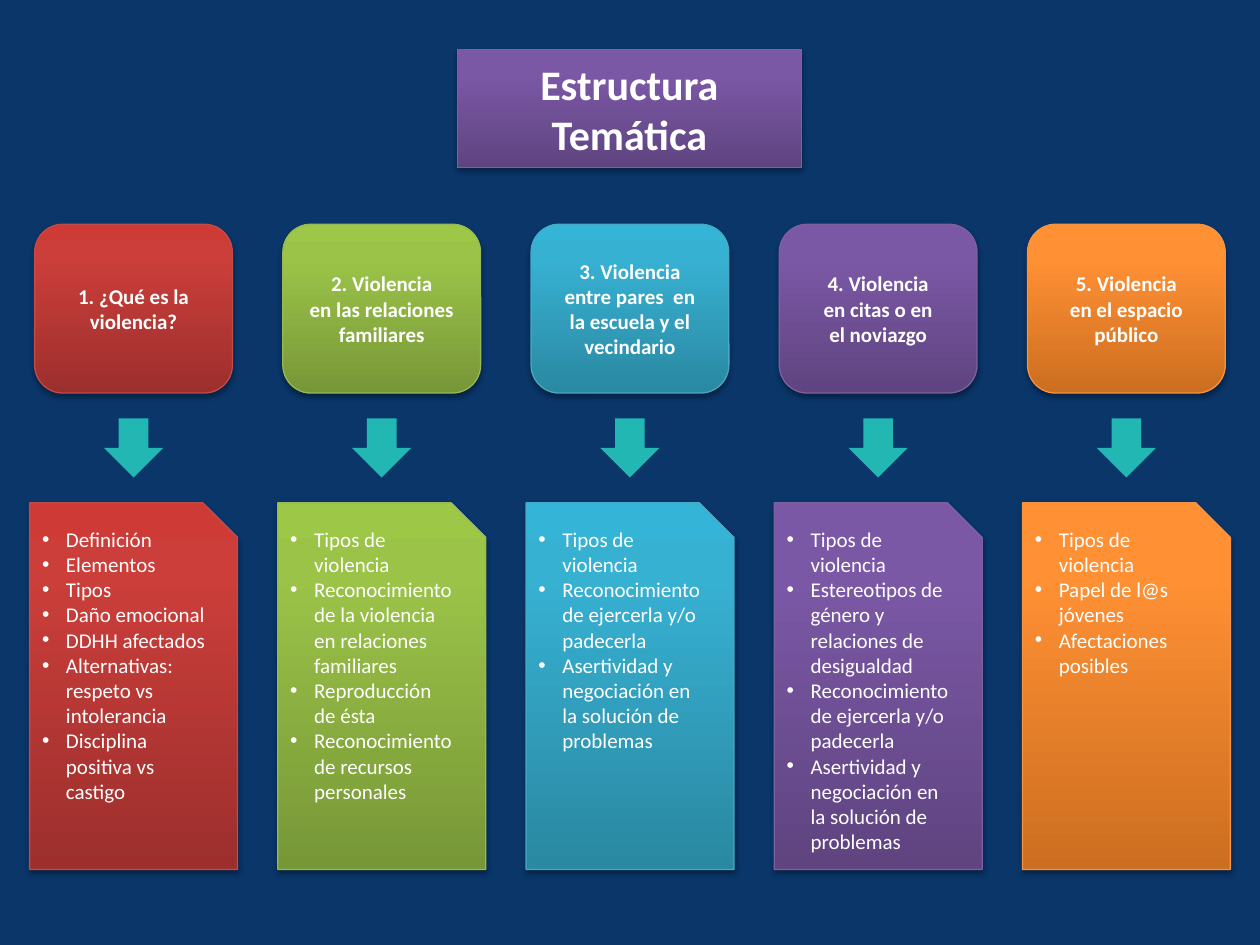
from dataclasses import dataclass

from lxml import etree
from pptx import Presentation
from pptx import util as u
from pptx.dml.color import RGBColor
from pptx.enum import shapes, text
from pptx.oxml import parse_xml
from pptx.oxml.ns import nsdecls, qn


@dataclass(frozen=True)
class Palette:
    """Gradient stops from bottom to top, and the outline colour."""
    bottom: str
    upper: str
    top: str
    line: str


@dataclass(frozen=True)
class Theme:
    """Colours, font and type sizes of the slide."""
    font: str = "Calibri"
    title_size: int = 24
    text_size: int = 12
    background: str = "0A366A"
    ink: str = "FFFFFF"
    arrow: str = "23B7B3"
    red: Palette = Palette("9C2F2D", "CB3E3A", "CE3B37", "BF4C48")
    green: Palette = Palette("779737", "9BC348", "9DC746", "98B955")
    blue: Palette = Palette("2A88A2", "37B1D2", "34B4D6", "46AAC5")
    purple: Palette = Palette("5F4480", "7B58A6", "7C57A8", "7D60A0")
    orange: Palette = Palette("CC6E20", "FF9034", "FF9136", "F69240")


THEME = Theme()
COLUMN_PITCH = 1.97
COLUMNS = [
    (THEME.red, "1. ¿Qué es la violencia?",
     ["Definición", "Elementos", "Tipos", "Daño emocional", "DDHH afectados",
      "Alternativas: respeto vs intolerancia", "Disciplina positiva vs castigo"]),
    (THEME.green, "2. Violencia\nen las relaciones familiares",
     ["Tipos de violencia", "Reconocimiento de la violencia en relaciones familiares",
      "Reproducción de ésta", "Reconocimiento de recursos personales"]),
    (THEME.blue, "3. Violencia\nentre pares  en\nla escuela y el vecindario",
     ["Tipos de violencia", "Reconocimiento de ejercerla y/o padecerla",
      "Asertividad y negociación en la solución de problemas"]),
    (THEME.purple, "4. Violencia\nen citas o en\nel noviazgo",
     ["Tipos de violencia", "Estereotipos de género y relaciones de desigualdad",
      "Reconocimiento de ejercerla y/o padecerla",
      "Asertividad y negociación en la solución de problemas"]),
    (THEME.orange, "5. Violencia\nen el espacio público",
     ["Tipos de violencia", "Papel de l@s jóvenes", "Afectaciones posibles"]),
]


def paint_panel(shape, palette):
    """Give a shape its vertical gradient, thin outline and soft shadow."""
    stops = "".join(
        f'<a:gs pos="{position}"><a:srgbClr val="{colour}"/></a:gs>'
        for position, colour in ((0, palette.bottom), (80000, palette.upper), (100000, palette.top)))
    gradient = parse_xml(
        f'<a:gradFill {nsdecls("a")} rotWithShape="1"><a:gsLst>{stops}</a:gsLst>'
        '<a:lin ang="16200000" scaled="0"/></a:gradFill>')
    shape._element.spPr.find(qn("a:prstGeom")).addnext(gradient)
    shape.line.color.rgb = RGBColor.from_string(palette.line)
    shape.line.width = u.Pt(0.75)
    shape.shadow.inherit = False
    shape._element.spPr.find(qn("a:effectLst")).append(parse_xml(
        f'<a:outerShdw {nsdecls("a")} blurRad="{u.Pt(3.1)}" dist="{u.Pt(1.8)}" dir="5400000" '
        'rotWithShape="0"><a:srgbClr val="000000"><a:alpha val="35000"/></a:srgbClr></a:outerShdw>'))


def write_runs(paragraph, content, size, bold, alignment):
    """Write the lines of one paragraph as formatted runs."""
    paragraph.alignment = alignment
    for index, line in enumerate(content.split("\n")):
        if index:
            paragraph.add_line_break()
        run = paragraph.add_run()
        run.text = line
        run.font.name = THEME.font
        run.font.size = u.Pt(size)
        run.font.bold = bold
        run.font.color.rgb = RGBColor.from_string(THEME.ink)


def add_bullet(paragraph):
    """Give a paragraph a hanging round bullet."""
    properties = paragraph._p.get_or_add_pPr()
    properties.set("marL", str(u.Inches(0.19)))
    properties.set("indent", str(-u.Inches(0.19)))
    etree.SubElement(properties, qn("a:buFont"), typeface="Arial")
    etree.SubElement(properties, qn("a:buChar"), char="•")


def add_panel(slide, kind, centre, top, width, height, palette):
    """Add a painted shape centred on a column."""
    shape = slide.shapes.add_shape(
        kind, u.Inches(centre - width / 2), u.Inches(top), u.Inches(width), u.Inches(height))
    paint_panel(shape, palette)
    shape.text_frame.word_wrap = True
    return shape


def add_title(slide, content):
    """Shape the title placeholder as a snipped panel."""
    title = slide.shapes.title
    title.left, title.top = u.Inches(3.63), u.Inches(0.39)
    title.width, title.height = u.Inches(2.73), u.Inches(0.94)
    title._element.spPr.find(qn("a:xfrm")).addnext(parse_xml(
        f'<a:prstGeom {nsdecls("a")} prst="snip2SameRect"><a:avLst/></a:prstGeom>'))
    paint_panel(title, THEME.purple)
    frame = title.text_frame
    frame.word_wrap = True
    frame.auto_size = text.MSO_AUTO_SIZE.NONE
    frame.vertical_anchor = text.MSO_ANCHOR.MIDDLE
    write_runs(frame.paragraphs[0], content, THEME.title_size, True, text.PP_ALIGN.CENTER)


def add_heading(slide, centre, content, palette):
    """Add the rounded heading of a column."""
    shape = add_panel(
        slide, shapes.MSO_SHAPE.ROUNDED_RECTANGLE, centre, 1.78, 1.57, 1.34, palette)
    frame = shape.text_frame
    frame.vertical_anchor = text.MSO_ANCHOR.MIDDLE
    write_runs(frame.paragraphs[0], content, THEME.text_size, True, text.PP_ALIGN.CENTER)


def add_arrow(slide, centre):
    """Add the flat arrow that leads from heading to topics."""
    size = 0.47
    arrow = slide.shapes.add_shape(
        shapes.MSO_SHAPE.DOWN_ARROW, u.Inches(centre - size / 2), u.Inches(3.32),
        u.Inches(size), u.Inches(size))
    arrow.fill.solid()
    arrow.fill.fore_color.rgb = RGBColor.from_string(THEME.arrow)
    arrow.line.fill.background()
    arrow.shadow.inherit = False


def add_topics(slide, centre, topics, palette):
    """Add the snipped panel with the bulleted topics of a column."""
    shape = add_panel(
        slide, shapes.MSO_SHAPE.SNIP_1_RECTANGLE, centre, 3.99, 1.65, 2.91, palette)
    frame = shape.text_frame
    frame.vertical_anchor = text.MSO_ANCHOR.TOP
    for index, topic in enumerate(topics):
        paragraph = frame.add_paragraph() if index else frame.paragraphs[0]
        add_bullet(paragraph)
        write_runs(paragraph, topic, THEME.text_size, False, text.PP_ALIGN.LEFT)


def main():
    """Build the slide and save it."""
    presentation = Presentation()
    presentation.slide_width, presentation.slide_height = u.Inches(10), u.Inches(7.5)
    slide = presentation.slides.add_slide(presentation.slide_layouts.get_by_name("Title Only"))
    slide.background.fill.solid()
    slide.background.fill.fore_color.rgb = RGBColor.from_string(THEME.background)
    add_title(slide, "Estructura Temática")
    for index, (palette, heading, topics) in enumerate(COLUMNS):
        centre = 5 + (index - 2) * COLUMN_PITCH
        add_heading(slide, centre, heading, palette)
        add_arrow(slide, centre)
        add_topics(slide, centre, topics, palette)
    presentation.save("out.pptx")


if __name__ == "__main__":
    main()
